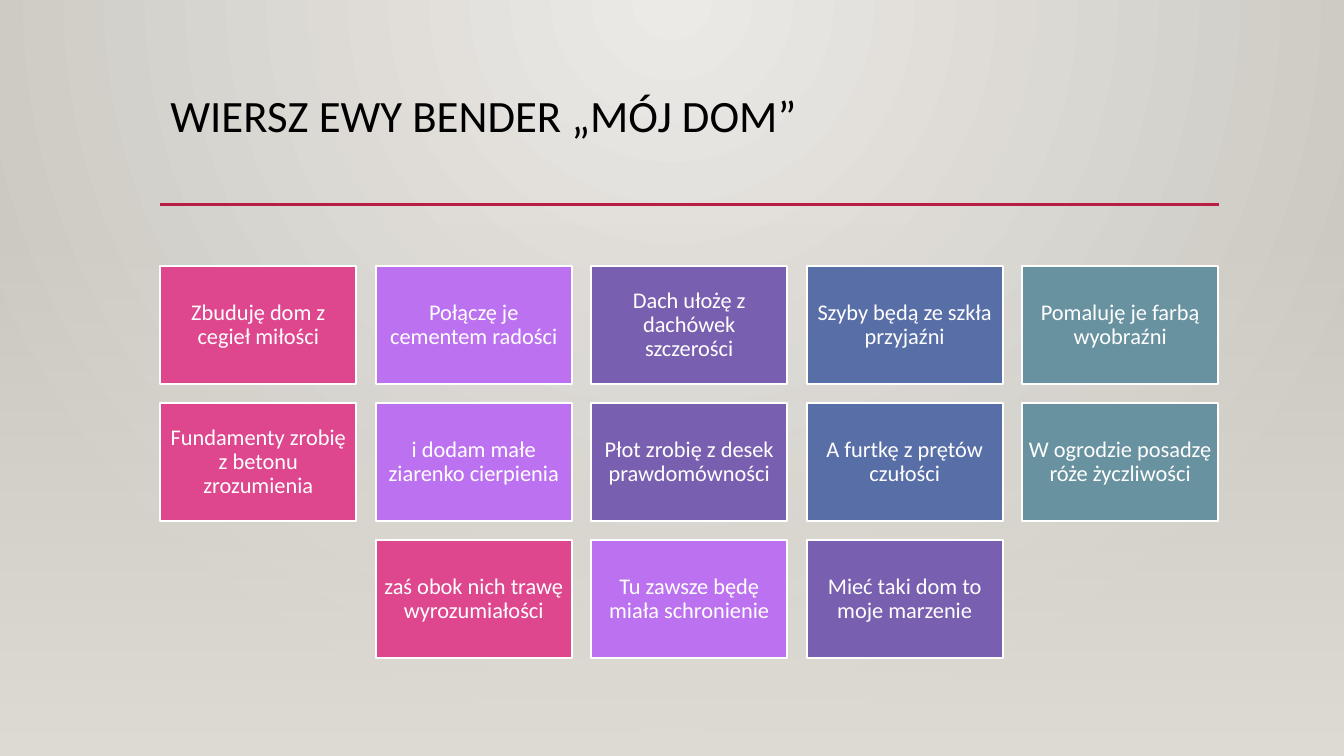
from lxml.etree import SubElement
from pptx import Presentation
from pptx.dml.color import RGBColor
from pptx.enum.shapes import MSO_CONNECTOR as Connector, MSO_SHAPE as Shape
from pptx.enum.text import MSO_ANCHOR as Anchor, MSO_AUTO_SIZE as AutoSize, PP_ALIGN as Align
from pptx.oxml.ns import qn
from pptx.util import Cm, Pt

COLOURS = {
    "glow": "ECEAE7", "edge": "CAC7C1", "floor": "DFDBD5", "rule": "B71E42",
    "title": "000000", "white": "FFFFFF",
}
CARD_COLOURS = ["DE478E", "BC72F0", "795FAF", "586EA6", "6892A0"]
FONT = "Calibri"
TITLE = "WIERSZ EWY BENDER „MÓJ DOM”"
VERSES = [
    [
        "Zbuduję dom z cegieł miłości",
        "Połączę je cementem radości",
        "Dach ułożę z dachówek szczerości",
        "Szyby będą ze szkła przyjaźni",
        "Pomaluję je farbą wyobraźni",
    ],
    [
        "Fundamenty zrobię z betonu zrozumienia",
        "i dodam małe ziarenko cierpienia",
        "Płot zrobię z desek prawdomówności",
        "A furtkę z prętów czułości",
        "W ogrodzie posadzę róże życzliwości",
    ],
    [
        "zaś obok nich trawę wyrozumiałości",
        "Tu zawsze będę miała schronienie",
        "Mieć taki dom to moje marzenie",
    ],
]
SLIDE_WIDTH, SLIDE_HEIGHT = 33.87, 19.05
LEFT, CARDS_TOP = 4.04, 6.71
CARD_WIDTH, CARD_HEIGHT = 4.94, 2.97
COLUMN_STEP, ROW_STEP = 5.43, 3.45
CARD_INSET = 0.15


def rgb(value):
    """Turn a hex string into a colour."""
    return RGBColor.from_string(value)


def set_gradient(fill, first, last):
    """Give a fill a gradient between two colours."""
    fill.gradient()
    for stop, colour in zip(fill.gradient_stops, (first, last)):
        stop.color.rgb = rgb(colour)


def format_text(text_frame, size, colour, align):
    """Format the only paragraph of a text frame."""
    paragraph = text_frame.paragraphs[0]
    paragraph.alignment = align
    paragraph.line_spacing = 0.9
    font = paragraph.runs[0].font
    font.name, font.size = FONT, Pt(size)
    font.color.rgb = rgb(colour)


def paint_background(slide):
    """Fill the background with a glow from the top centre."""
    set_gradient(slide.background.fill, COLOURS["glow"], COLOURS["edge"])
    gradient = next(slide.element.iter(qn("a:gradFill")))
    gradient.remove(gradient.find(qn("a:lin")))
    glow = SubElement(gradient, qn("a:path"), path="circle")
    SubElement(glow, qn("a:fillToRect"), l="43000", t="0", r="43000", b="100000")


def add_floor(slide):
    """Add the lower panel that fades in downwards."""
    top = 5.61
    floor = slide.shapes.add_shape(
        Shape.RECTANGLE, 0, Cm(top), Cm(SLIDE_WIDTH), Cm(SLIDE_HEIGHT - top))
    floor.shadow.inherit = False
    floor.line.fill.background()
    set_gradient(floor.fill, COLOURS["floor"], COLOURS["floor"])
    floor.fill.gradient_angle = 270
    SubElement(next(floor.element.iter(qn("a:srgbClr"))), qn("a:alpha"), val="0")


def add_title(slide):
    """Place and format the title."""
    title = slide.shapes.title
    title.left, title.top = Cm(LEFT), Cm(2.24)
    title.width, title.height = Cm(26.67), Cm(2.92)
    text_frame = title.text_frame
    text_frame.text = TITLE
    text_frame.auto_size = AutoSize.NONE
    text_frame.vertical_anchor = Anchor.TOP
    format_text(text_frame, 32, COLOURS["title"], Align.LEFT)


def add_rule(slide):
    """Draw the line below the title."""
    rule = slide.shapes.add_connector(
        Connector.STRAIGHT, Cm(LEFT), Cm(5.15), Cm(30.72), Cm(5.15))
    rule.line.color.rgb = rgb(COLOURS["rule"])
    rule.line.width = Pt(2.5)
    SubElement(rule.element.spPr, qn("a:effectLst"))


def add_card(slide, left, top, verse, colour):
    """Add a coloured card with one verse."""
    card = slide.shapes.add_shape(
        Shape.RECTANGLE, Cm(left), Cm(top), Cm(CARD_WIDTH), Cm(CARD_HEIGHT))
    card.shadow.inherit = False
    card.fill.solid()
    card.fill.fore_color.rgb = rgb(colour)
    card.line.color.rgb = rgb(COLOURS["white"])
    card.line.width = Pt(1.25)
    text_frame = card.text_frame
    text_frame.text = verse
    text_frame.word_wrap = True
    text_frame.vertical_anchor = Anchor.MIDDLE
    text_frame.margin_left = text_frame.margin_right = Cm(CARD_INSET)
    text_frame.margin_top = text_frame.margin_bottom = Cm(CARD_INSET)
    format_text(text_frame, 16, COLOURS["white"], Align.CENTER)


def add_poem(slide):
    """Lay out the verses in centred rows of cards."""
    for row, verses in enumerate(VERSES):
        indent = (len(CARD_COLOURS) - len(verses)) / 2
        for column, (verse, colour) in enumerate(zip(verses, CARD_COLOURS)):
            left = LEFT + (indent + column) * COLUMN_STEP
            add_card(slide, left, CARDS_TOP + row * ROW_STEP, verse, colour)


def main():
    """Build and save the presentation."""
    presentation = Presentation()
    presentation.slide_width = Cm(SLIDE_WIDTH)
    presentation.slide_height = Cm(SLIDE_HEIGHT)
    slide = presentation.slides.add_slide(presentation.slide_layouts[5])
    paint_background(slide)
    add_title(slide)
    add_rule(slide)
    add_floor(slide)
    add_poem(slide)
    presentation.save("out.pptx")


if __name__ == "__main__":
    main()
